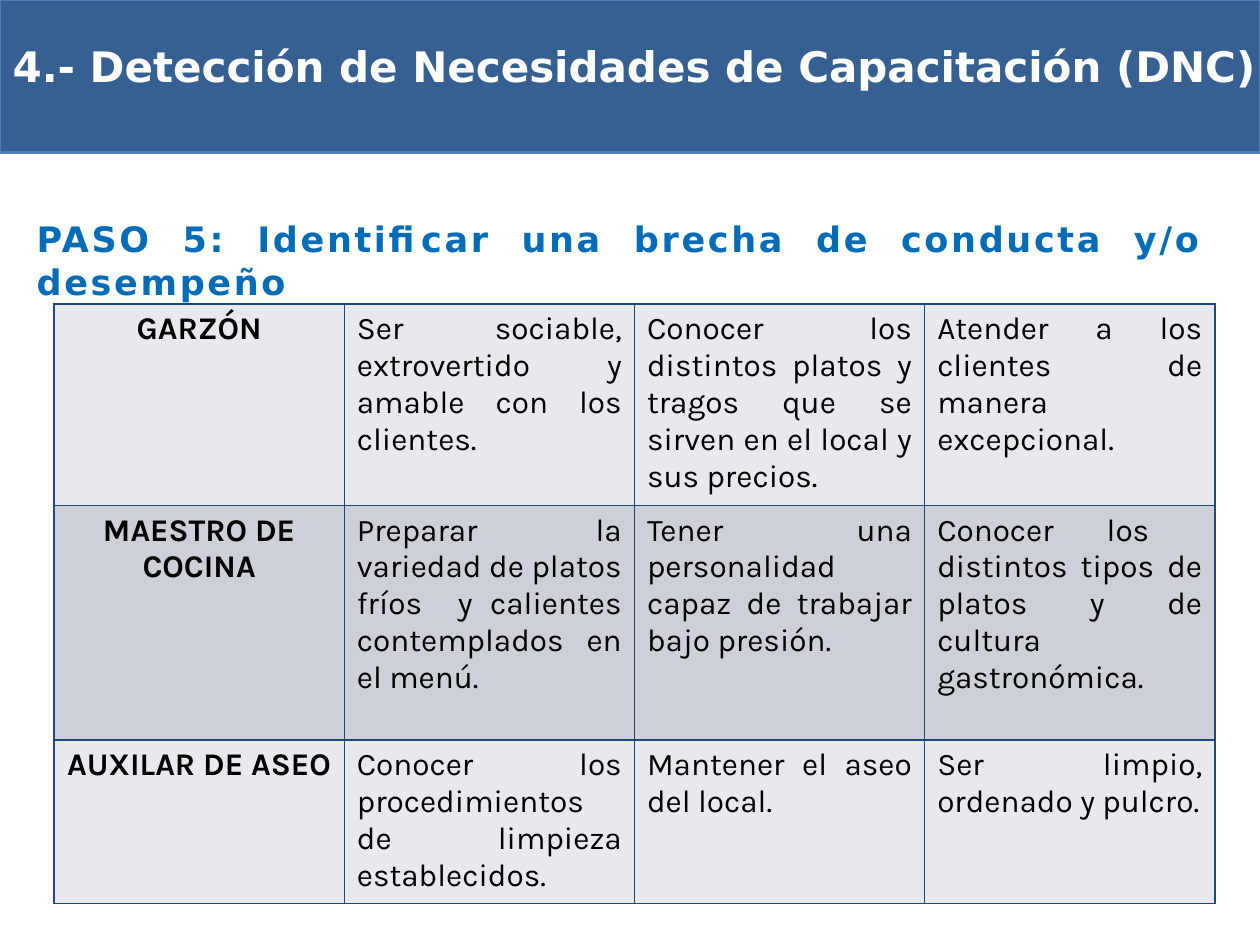
from pptx import Presentation
from pptx.dml.color import RGBColor
from pptx.enum.shapes import MSO_SHAPE
from pptx.enum.text import MSO_ANCHOR, MSO_AUTO_SIZE, PP_ALIGN
from pptx.oxml import parse_xml
from pptx.oxml.ns import nsdecls
from pptx.util import Cm, Pt

ROWS = [
    ("GARZÓN",
     "Ser sociable, extrovertido y amable con los clientes.",
     "Conocer los distintos platos y tragos que se sirven en el local y sus precios.",
     "Atender a los clientes de manera excepcional."),
    ("MAESTRO DE COCINA",
     "Preparar la variedad de platos fríos  y calientes contemplados en el menú.",
     "Tener una personalidad capaz de trabajar bajo presión.",
     "Conocer los  distintos tipos de platos y de cultura gastronómica."),
    ("AUXILAR DE ASEO",
     "Conocer los procedimientos de limpieza establecidos.",
     "Mantener el aseo del local.",
     "Ser limpio, ordenado y pulcro."),
]
ROW_HEIGHTS = (3.97, 4.72, 3.25)
COL_WIDTH = 5.85
ROW_FILLS = ("E8E9EC", "CDD0D7")


def rgb(value):
    return RGBColor.from_string(value)


def write(tf, text, font, size, color, bold, align):
    p = tf.paragraphs[0]
    p.alignment = align
    p.space_before = Pt(0)
    r = p.add_run()
    r.text = text
    r.font.name = font
    r.font.size = Pt(size)
    r.font.bold = bold
    r.font.color.rgb = rgb(color)
    return r


def add_band(s):
    sp = s.shapes.add_shape(MSO_SHAPE.RECTANGLE, 0, 0, Cm(25.4), Cm(3.08))
    sp.shadow.inherit = False
    sp.fill.solid()
    sp.fill.fore_color.rgb = rgb("376092")
    sp.line.color.rgb = rgb("4F81BD")
    sp.line.width = Pt(1.5)
    s.shapes._spTree.insert(2, sp._element)  # behind the title


def set_title(s, text):
    title = s.shapes.title
    title.left, title.top, title.width, title.height = Cm(0), Cm(0.69), Cm(26.7), Cm(2.08)
    tf = title.text_frame
    tf.auto_size = MSO_AUTO_SIZE.NONE
    tf.vertical_anchor = MSO_ANCHOR.TOP
    write(tf, text, "DejaVu Sans", 24, "FFFFFF", True, PP_ALIGN.LEFT)


def add_step(s, text):
    tf = s.shapes.add_textbox(Cm(0.49), Cm(4.27), Cm(24), Cm(1.9)).text_frame
    tf.word_wrap = True
    r = write(tf, text, "DejaVu Sans", 20, "006CB7", True, PP_ALIGN.JUSTIFY)
    r.font._element.set("spc", "150")


def set_borders(cell, color, width):
    tcPr = cell._tc.get_or_add_tcPr()
    for i, side in enumerate(("lnL", "lnR", "lnT", "lnB")):
        tcPr.insert(i, parse_xml(
            f'<a:{side} {nsdecls("a")} w="{Pt(width)}"><a:solidFill>'
            f'<a:srgbClr val="{color}"/></a:solidFill></a:{side}>'))


def add_profile_table(s):
    table = s.shapes.add_table(len(ROWS), len(ROWS[0]), Cm(1.09), Cm(6.13),
                               Cm(COL_WIDTH * len(ROWS[0])), Cm(sum(ROW_HEIGHTS))).table
    for col in table.columns:
        col.width = Cm(COL_WIDTH)
    for i, texts in enumerate(ROWS):
        table.rows[i].height = Cm(ROW_HEIGHTS[i])
        for j, text in enumerate(texts):
            cell = table.cell(i, j)
            cell.fill.solid()
            cell.fill.fore_color.rgb = rgb(ROW_FILLS[i % 2])
            set_borders(cell, "1F497D", 1)
            is_role = j == 0
            write(cell.text_frame, text, "Karla", 18, "000000", is_role,
                  PP_ALIGN.CENTER if is_role else PP_ALIGN.JUSTIFY)


def main():
    prs = Presentation()
    prs.slide_width, prs.slide_height = Cm(25.4), Cm(19.05)
    s = prs.slides.add_slide(prs.slide_layouts[5])
    add_band(s)
    set_title(s, "4.- Detección de Necesidades de Capacitación (DNC)")
    add_step(s, "PASO 5: Identificar una brecha de conducta y/o desempeño")
    add_profile_table(s)
    prs.save("out.pptx")


if __name__ == "__main__":
    main()
